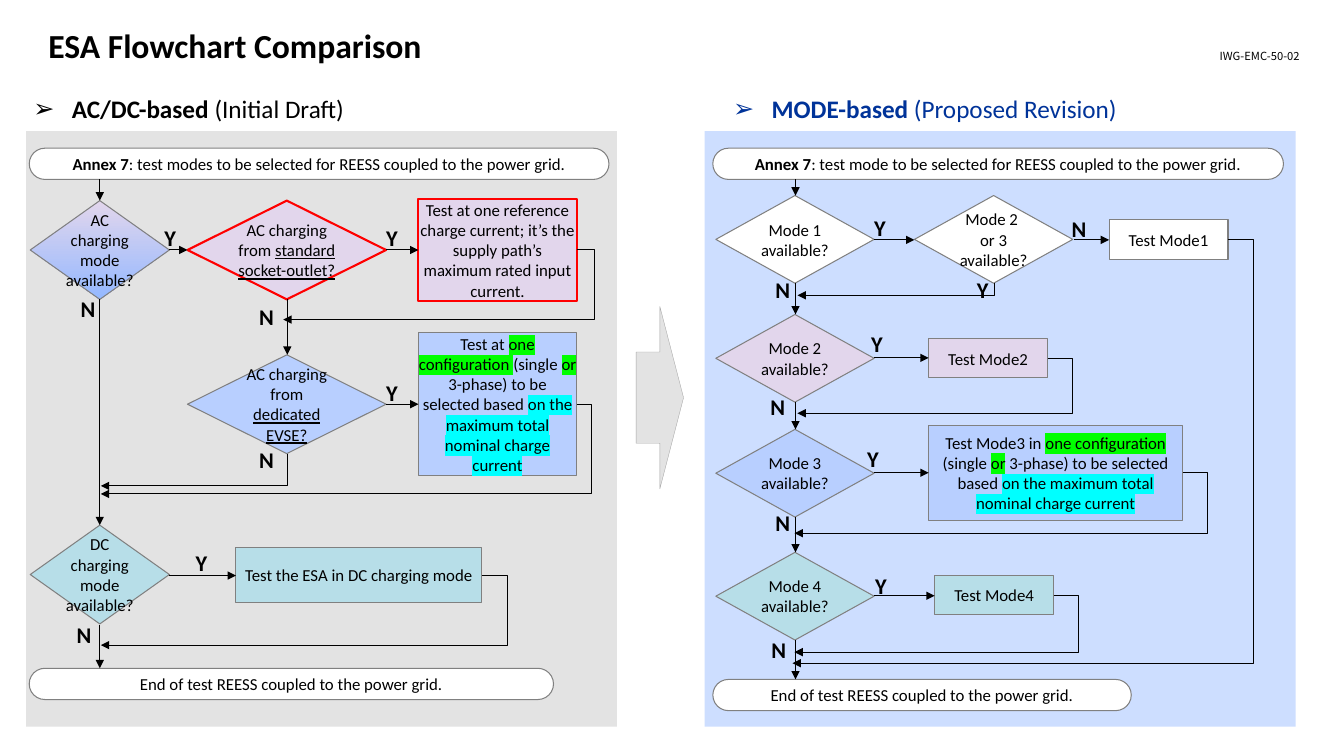
from functools import partial
from lxml.etree import SubElement
from pptx import Presentation
from pptx.dml.color import RGBColor
from pptx.enum.shapes import MSO_CONNECTOR, MSO_SHAPE
from pptx.enum.text import MSO_ANCHOR, MSO_AUTO_SIZE, PP_ALIGN
from pptx.oxml.ns import qn
from pptx.util import Cm, Pt

COLORS = {
    "white": "FFFFFF", "black": "000000", "navy": "003399", "gray": "E3E3E3",
    "sky": "CDDEFF", "edge": "808080", "arrow_edge": "A6A6A6", "red": "FF0000",
    "lilac": "E2D6EC", "blue": "B8CFFF", "deep_blue": "94B8FF", "teal": "B7DEE8",
    "green": "00FF00", "cyan": "00FFFF",
}
UNIT = 2.54
NO_INSETS = dict.fromkeys(("margin_left", "margin_top", "margin_right", "margin_bottom"), 0)
BODY = {"size": Pt(12), "name": "Calibri"}
LABEL = {"size": Pt(16), "name": "Calibri", "bold": True}
BAR, BOX, DIAMOND = MSO_SHAPE.ROUNDED_RECTANGLE, MSO_SHAPE.RECTANGLE, MSO_SHAPE.DIAMOND
CONFIGURATION = [("one configuration ", {"highlight": "green"}), ("(single ", {}),
                 ("or", {"highlight": "green"}), (" 3-phase) to be selected based ", {}),
                 ("on the maximum total nominal charge current", {"highlight": "cyan"})]
END_TEXT = [("End of test REESS coupled to the power grid.", {})]


def rgb(name):
    return RGBColor.from_string(COLORS[name])


def units(*values):
    return [Cm(v * UNIT) for v in values]


def apply(obj, values):
    for key, value in values.items():
        setattr(obj, key, value)


def write(tf, paragraphs, font, align=PP_ALIGN.LEFT, color="black"):
    for i, runs in enumerate(paragraphs):
        p = tf.add_paragraph() if i else tf.paragraphs[0]
        p.alignment = align
        for text, extra in runs:
            r = p.add_run()
            r.text = text
            values = {**font, **extra}
            highlight = values.pop("highlight", None)
            apply(r.font, values)
            r.font.color.rgb = rgb(color)
            if highlight:
                rPr = r._r.get_or_add_rPr()
                mark = SubElement(rPr, qn("a:highlight"))
                SubElement(mark, qn("a:srgbClr"), val=COLORS[highlight])
                rPr.find(qn("a:solidFill")).addnext(mark)


def block(s, box, kind, place, fill, edge=None, width=0.75):
    x, y, w, h = place
    sp = s.shapes.add_shape(kind, *units(box[0] + x, box[1] + y, w, h))
    sp.shadow.inherit = False
    if isinstance(fill, tuple):
        sp.fill.gradient()
        sp.fill.gradient_angle = 270
        for stop, name in zip(sp.fill.gradient_stops, fill):
            stop.color.rgb = rgb(name)
    else:
        sp.fill.solid()
        sp.fill.fore_color.rgb = rgb(fill)
    if edge:
        sp.line.color.rgb = rgb(edge)
        sp.line.width = Pt(width)
    else:
        sp.line.fill.background()
    return sp


def node(s, box, kind, place, fill, *paragraphs, edge="edge", width=0.75):
    sp = block(s, box, kind, place, fill, edge, width)
    tf = sp.text_frame
    apply(tf, {"word_wrap": True, "vertical_anchor": MSO_ANCHOR.MIDDLE})
    if kind == BAR:
        sp.adjustments[0] = 0.5
    else:
        apply(tf, NO_INSETS)
    write(tf, paragraphs, BODY, PP_ALIGN.CENTER)


def label(s, box, text, x, y):
    tf = s.shapes.add_textbox(*units(box[0] + x, box[1] + y, 0.14, 0.27)).text_frame
    apply(tf, {**NO_INSETS, "word_wrap": False, "auto_size": MSO_AUTO_SIZE.SHAPE_TO_FIT_TEXT})
    write(tf, [[(text, {})]], LABEL)


def arrow(s, box, x1, y1, x2, y2, kind=MSO_CONNECTOR.STRAIGHT):
    c = s.shapes.add_connector(kind, *units(box[0] + x1, box[1] + y1, box[0] + x2, box[1] + y2))
    c.line.color.rgb = rgb("black")
    c.line.width = Pt(0.75)
    SubElement(c.line._get_or_add_ln(), qn("a:tailEnd"), type="triangle")
    spPr = c.element.spPr
    SubElement(spPr, qn("a:effectLst"))
    return spPr


def return_arrow(s, box, x1, y1, x2, y2, reach=0.25):
    spPr = arrow(s, box, x1, y1, x2, y2, MSO_CONNECTOR.ELBOW)
    geom = spPr.find(qn("a:prstGeom"))
    guides = geom.find(qn("a:avLst"))
    if guides is None:
        guides = SubElement(geom, qn("a:avLst"))
    ratio = round(100000 * reach / (x2 - x1))
    SubElement(guides, qn("a:gd"), name="adj1", fmla=f"val {ratio}")


def corner_arrow(s, box, x1, y1, x2, y2):
    cx, cy = (x1 + x2) / 2, (y1 + y2) / 2
    half_w, half_h = (y2 - y1) / 2, (x1 - x2) / 2
    spPr = arrow(s, box, cx - half_w, cy - half_h, cx + half_w, cy + half_h, MSO_CONNECTOR.ELBOW)
    spPr.find(qn("a:xfrm")).set("rot", "5400000")
    spPr.find(qn("a:prstGeom")).set("prst", "bentConnector2")


def links(s, box, straight, returns, corner, labels):
    for ends in straight:
        arrow(s, box, *ends)
    for ends in returns:
        return_arrow(s, box, *ends)
    corner_arrow(s, box, *corner)
    for text, spots in labels.items():
        for x, y in spots:
            label(s, box, text, x, y)


def title(s, box):
    sp = s.shapes.title
    apply(sp, dict(zip(("left", "top", "width", "height"), units(*box))))
    apply(sp.text_frame, {"vertical_anchor": MSO_ANCHOR.TOP, "auto_size": MSO_AUTO_SIZE.NONE})
    write(sp.text_frame, [[("ESA Flowchart Comparison", {})]], {**LABEL, "size": Pt(24)})


def heading(sp, box, strong, rest, color):
    apply(sp, dict(zip(("left", "top", "width", "height"), units(*box))))
    tf = sp.text_frame
    apply(tf, {"vertical_anchor": MSO_ANCHOR.MIDDLE, "auto_size": MSO_AUTO_SIZE.NONE,
               "margin_left": Cm(0.51)})
    write(tf, [[(strong, {"bold": True}), (rest, {"bold": False})]],
          {"size": Pt(18), "name": "Calibri"}, color=color)
    p = tf.paragraphs[0]
    p.space_before = Pt(0)
    pPr = p._p.get_or_add_pPr()
    apply_indent = {"marL": str(Cm(0.97)), "indent": str(-Cm(0.97))}
    for key, value in apply_indent.items():
        pPr.set(key, value)
    SubElement(pPr, qn("a:buFont"), typeface="Arial")
    SubElement(pPr, qn("a:buChar"), char="➢")


def draft_chart(s, box):
    block(s, box, BOX, (0, 0, *box[2:]), "gray")
    add = partial(node, s, box)
    add(BAR, (0.03, 0.17, 5.75, 0.31), "white", [("Annex 7", {"bold": True}),
        (": test modes to be selected for REESS coupled to the power grid.", {})])
    for y, current, fill in ((0.69, "AC", ("lilac", "deep_blue")), (3.91, "DC", "teal")):
        add(DIAMOND, (0.04, y, 1.38, 0.98), fill, [(f"{current} charging mode available?", {})])
    for y, source, fill, edge, width in ((0.69, "standard socket-outlet?", "lilac", "red", 1.5),
                                         (2.22, "dedicated EVSE?", "blue", "edge", 0.75)):
        add(DIAMOND, (1.6, y, 1.97, 0.98), fill, [("AC charging from ", {}),
            (source, {"underline": True})], edge=edge, width=width)
    add(BOX, (3.89, 0.67, 1.57, 1.02), "lilac", [("Test at one reference charge current; it’s the "
        "supply path’s maximum rated input current.", {})], edge="red", width=1.5)
    add(BOX, (3.89, 2, 1.57, 1.42), "blue", [("Test at ", {}), *CONFIGURATION])
    add(BOX, (2.08, 4.13, 2.44, 0.55), "teal", [("Test the ESA in DC charging mode", {})])
    add(BAR, (0.03, 5.33, 5.2, 0.31), "white", END_TEXT)
    links(s, box,
          [(0.73, 0.48, 0.73, 0.69), (0.73, 1.67, 0.73, 3.91), (0.73, 4.9, 0.73, 5.33),
           (1.42, 1.18, 1.6, 1.18), (3.57, 1.18, 3.89, 1.18), (2.59, 1.67, 2.59, 2.22),
           (3.57, 2.71, 3.89, 2.71), (1.42, 4.41, 2.08, 4.41)],
          [(5.46, 1.18, 2.55, 1.87, 0.18), (5.46, 2.71, 0.74, 3.6, 0.15), (4.52, 4.41, 0.74, 5.1)],
          (2.59, 3.2, 0.74, 3.52),
          {"Y": [(1.37, 0.92), (3.57, 0.92), (3.57, 2.46), (1.68, 4.15)],
           "N": [(0.54, 1.63), (2.31, 1.71), (2.31, 3.13), (0.5, 4.86)]})


def revision_chart(s, box):
    block(s, box, BOX, (0, 0, *box[2:]), "sky")
    add = partial(node, s, box)
    add(BAR, (0.08, 0.17, 5.66, 0.31), "white", [("Annex 7", {"bold": True}),
        (": test mode to be selected for REESS coupled to the power grid.", {})])
    modes = ((0.64, "white", (4.01, 0.88, 1.18, 0.39)), (1.82, "lilac", (2.22, 2.06, 1.18, 0.39)),
             (2.96, "blue", (2.22, 2.92, 2.52, 0.94)), (4.18, "teal", (2.28, 4.41, 1.18, 0.39)))
    for mode, (y, fill, test_place) in enumerate(modes, 1):
        add(DIAMOND, (0.11, y, 1.57, 0.87), fill, [(f"Mode {mode} available?", {})])
        test = [("Test Mode3 in ", {}), *CONFIGURATION] if mode == 3 else [(f"Test Mode{mode}", {})]
        add(BOX, test_place, fill, test)
    add(DIAMOND, (2.08, 0.64, 1.57, 0.87), "white", [("Mode 2 ", {})], [("or 3 available?", {})])
    add(BAR, (0.08, 5.44, 4.15, 0.31), "white", END_TEXT)
    drops = ((0.48, 0.64), (1.51, 1.82), (2.69, 2.96), (3.83, 4.18), (5.05, 5.44))
    steps = ((1.68, 2.08, 1.08), (3.66, 4.01, 1.08), (1.68, 2.22, 2.25),
             (1.68, 2.22, 3.39), (1.68, 2.28, 4.61))
    links(s, box,
          [(0.9, top, 0.9, end) for top, end in drops] + [(x1, y, x2, y) for x1, x2, y in steps],
          [(3.4, 2.26, 0.92, 2.8), (4.74, 3.39, 0.89, 3.99), (5.19, 1.08, 0.87, 5.28),
           (3.46, 4.61, 0.89, 5.17)],
          (2.87, 1.51, 0.92, 1.63),
          {"Y": [(1.68, 0.82), (2.7, 1.44), (1.65, 1.98), (1.61, 3.12), (1.69, 4.38)],
           "N": [(3.64, 0.83), (0.7, 1.44), (0.65, 2.6), (0.7, 3.75), (0.66, 5.01)]})


def document_number(s, box):
    tf = s.shapes.add_textbox(*units(*box)).text_frame
    tf.word_wrap = True
    write(tf, [[("IWG-EMC-50-02", {})]], {"size": Pt(8), "name": "Noto Sans CJK KR"}, PP_ALIGN.RIGHT)


def main():
    prs = Presentation()
    prs.slide_width, prs.slide_height = units(13.33, 7.5)
    s = prs.slides.add_slide(prs.slide_layouts[3])
    title(s, (0.38, 0.2, 10.65, 0.47))
    heading(s.placeholders[1], (0.13, 0.92, 5.74, 0.32), "AC/DC-based ", "(Initial Draft)", "black")
    heading(s.placeholders[2], (7.07, 0.92, 5.74, 0.32), "MODE-based", " (Proposed Revision)", "navy")
    draft_chart(s, (0.26, 1.3, 5.86, 5.91))
    revision_chart(s, (6.99, 1.3, 5.86, 5.91))
    block(s, (6.31, 3.04), MSO_SHAPE.RIGHT_ARROW, (0, 0, 0.47, 1.81), "gray", "arrow_edge", 0.25)
    document_number(s, (11.1, 0.44, 1.89, 0.24))
    prs.save("out.pptx")


if __name__ == "__main__":
    main()
